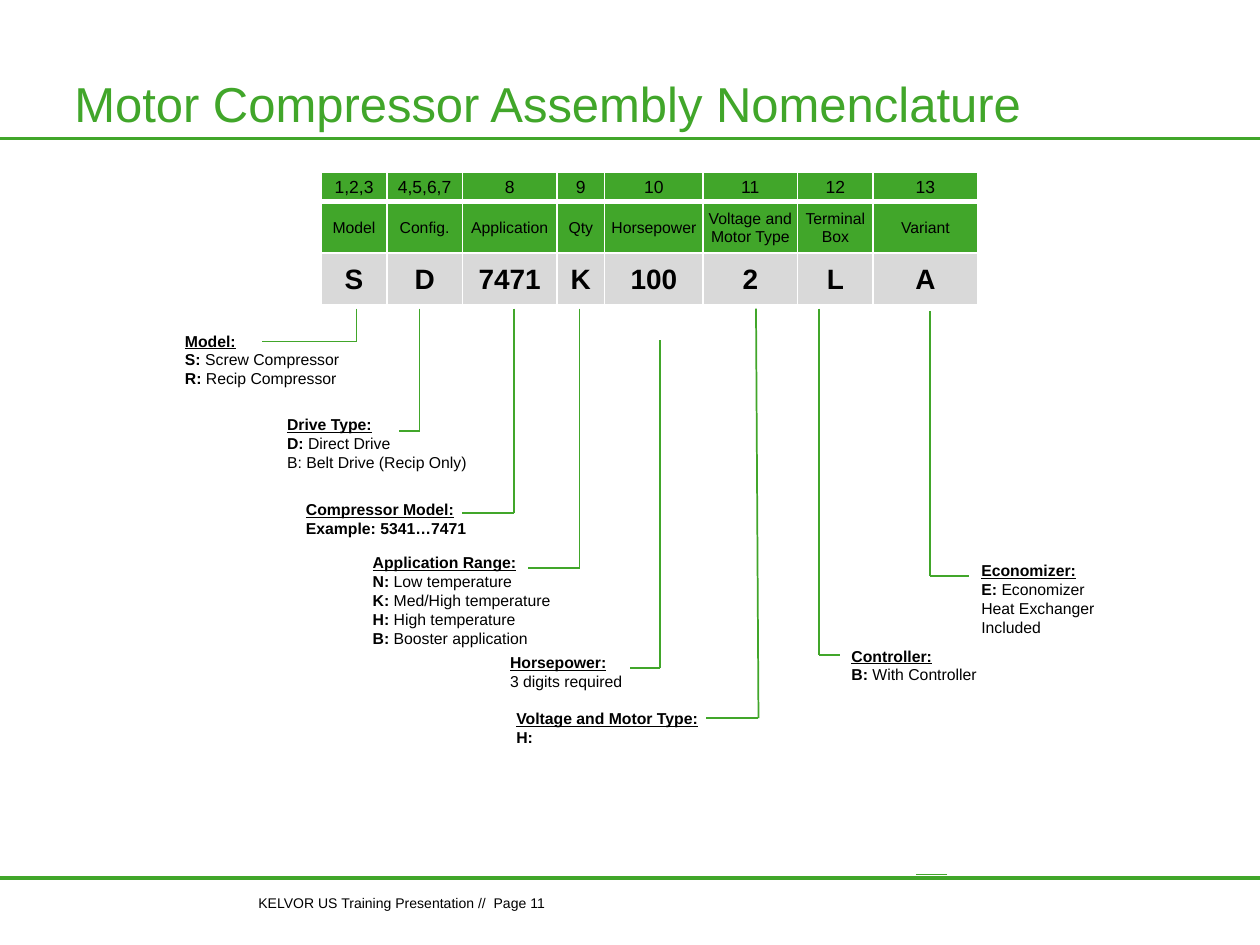
from itertools import pairwise
from lxml.etree import SubElement
from pptx import Presentation
from pptx.dml.color import RGBColor
from pptx.enum.shapes import MSO_CONNECTOR
from pptx.enum.text import MSO_ANCHOR, PP_ALIGN
from pptx.oxml import parse_xml
from pptx.oxml.ns import nsdecls, qn
from pptx.util import Inches, Pt

GREEN = RGBColor(0x41, 0xA6, 0x2A)
GREY = RGBColor(0xD9, 0xD9, 0xD9)
WHITE = RGBColor(0xFF, 0xFF, 0xFF)
BLACK = RGBColor(0, 0, 0)
FONT = "Arial"

TITLE = "Motor Compressor Assembly Nomenclature"
FOOTER = "KELVOR US Training Presentation //  Page 11"

COL_WIDTHS = [0.52, 0.6, 0.75, 0.38, 0.78, 0.75, 0.6, 0.83]
TABLE_ROWS = [
    (0.23, 10, False, GREEN, 3,
     ["1,2,3", "4,5,6,7", "8", "9", "10", "11", "12", "13"]),
    (0.41, 9, False, GREEN, 1,
     ["Model", "Config.", "Application", "Qty", "Horsepower",
      "Voltage and Motor Type", "Terminal Box", "Variant"]),
    (0.41, 16, True, GREY, 1,
     ["S", "D", "7471", "K", "100", "2", "L", "A"]),
]

LABELS = [
    ((1.37, 2.58, 1.43, 0.42), "Model:",
     [("S:", " Screw Compressor"), ("R: ", "Recip Compressor")]),
    ((2.18, 3.24, 1.81, 0.42), "Drive Type:",
     [("D: ", "Direct Drive"), ("", "B: Belt Drive (Recip Only)")]),
    ((2.33, 3.92, 1.5, 0.39), "Compressor Model:",
     [("Example: 5341…7471", "")]),
    ((2.86, 4.34, 1.74, 0.34), "Application Range:",
     [("N: ", "Low temperature"), ("K:", " Med/High temperature"),
      ("H: ", "High temperature"), ("B: ", "Booster application")]),
    ((3.95, 5.13, 1.29, 0.32), "Horsepower:", [("", "3 digits required")]),
    ((4, 5.58, 2.6, 0.34), "Voltage and Motor Type:", [("H:", "")]),
    ((6.66, 5.08, 1.26, 0.41), "Controller:", [("B: ", "With Controller")]),
    ((7.69, 4.4, 1.25, 0.34), "Economizer:",
     [("E:", " Economizer Heat Exchanger Included")]),
]

LEADERS = [
    [(2.83, 2.45), (2.83, 2.71), (2.08, 2.71)],
    [(3.33, 2.45), (3.33, 3.42), (3.17, 3.42)],
    [(4.08, 2.45), (4.08, 4.07), (3.67, 4.07)],
    [(4.6, 2.45), (4.6, 4.51), (4.19, 4.51)],
    [(5.24, 2.7), (5.24, 5.3), (5, 5.3)],
    [(6, 2.45), (6.02, 5.7), (5.6, 5.7)],
    [(6.5, 2.45), (6.5, 5.2), (6.67, 5.2)],
    [(7.38, 2.47), (7.38, 4.57), (7.69, 4.57)],
]
FOOTER_TICK = [(7.52, 6.94), (7.27, 6.94)]
RULES = [[(0, y), (10, y)] for y in (6.97, 1.1)]


def add_run(p, text, size, color=BLACK, bold=False, underline=False):
    r = p.add_run()
    r.text = text
    r.font.name = FONT
    r.font.size = Pt(size)
    r.font.color.rgb = color
    r.font.bold = bold
    r.font.underline = underline


def add_box(s, box, wrap=True):
    tf = s.shapes.add_textbox(*map(Inches, box)).text_frame
    tf.word_wrap = wrap
    return tf


def set_insets(tf, left):
    tf.margin_left = Inches(left)
    tf.margin_top = tf.margin_right = tf.margin_bottom = 0


def add_lines(s, points, width=1):
    for start, end in pairwise(points):
        line = s.shapes.add_connector(
            MSO_CONNECTOR.STRAIGHT, *map(Inches, start + end))
        line.line.color.rgb = GREEN
        line.line.width = Pt(width)
        SubElement(line._element.spPr, qn("a:effectLst"))


def set_borders(cell, bottom):
    tcPr = cell._tc.get_or_add_tcPr()
    for i, (side, width) in enumerate(
            [("L", 1), ("R", 1), ("T", 1), ("B", bottom)]):
        tcPr.insert(i, parse_xml(
            f'<a:ln{side} {nsdecls("a")} w="{Pt(width)}"><a:solidFill>'
            f'<a:srgbClr val="{WHITE}"/></a:solidFill></a:ln{side}>'))


def add_code_table(s):
    height = sum(row[0] for row in TABLE_ROWS)
    table = s.shapes.add_table(
        len(TABLE_ROWS), len(COL_WIDTHS), Inches(2.55), Inches(1.37),
        Inches(sum(COL_WIDTHS)), Inches(height)).table
    for col, width in zip(table.columns, COL_WIDTHS):
        col.width = Inches(width)
    for row, (height, size, bold, fill, bottom, texts) in zip(
            table.rows, TABLE_ROWS):
        row.height = Inches(height)
        for cell, text in zip(row.cells, texts):
            cell.fill.solid()
            cell.fill.fore_color.rgb = fill
            cell.vertical_anchor = MSO_ANCHOR.MIDDLE
            cell.margin_left = cell.margin_right = Inches(0.01)
            cell.margin_top = Inches(0.01)
            cell.margin_bottom = 0
            set_borders(cell, bottom)
            p = cell.text_frame.paragraphs[0]
            p.alignment = PP_ALIGN.CENTER
            add_run(p, text, size, bold=bold)


def add_label(s, box, heading, entries):
    tf = add_box(s, box)
    add_run(tf.paragraphs[0], heading, 9, bold=True, underline=True)
    for code, meaning in entries:
        p = tf.add_paragraph()
        if code:
            add_run(p, code, 9, bold=True)
        if meaning:
            add_run(p, meaning, 9)


def main():
    prs = Presentation()
    prs.slide_width, prs.slide_height = Inches(10), Inches(7.5)
    s = prs.slides.add_slide(prs.slide_layouts[6])

    for rule in RULES:
        add_lines(s, rule, 2)

    tf = add_box(s, (1.85, 7.1, 2.51, 0.13), wrap=False)
    set_insets(tf, 0.2)
    add_run(tf.paragraphs[0], FOOTER, 8)

    tf = add_box(s, (0, 0.58, 9.56, 0.47))
    set_insets(tf, 0.59)
    tf.vertical_anchor = MSO_ANCHOR.BOTTOM
    add_run(tf.paragraphs[0], TITLE, 28, GREEN)

    add_code_table(s)
    for label in LABELS:
        add_label(s, *label)
    for points in LEADERS + [FOOTER_TICK]:
        add_lines(s, points)

    prs.save("out.pptx")


if __name__ == "__main__":
    main()
